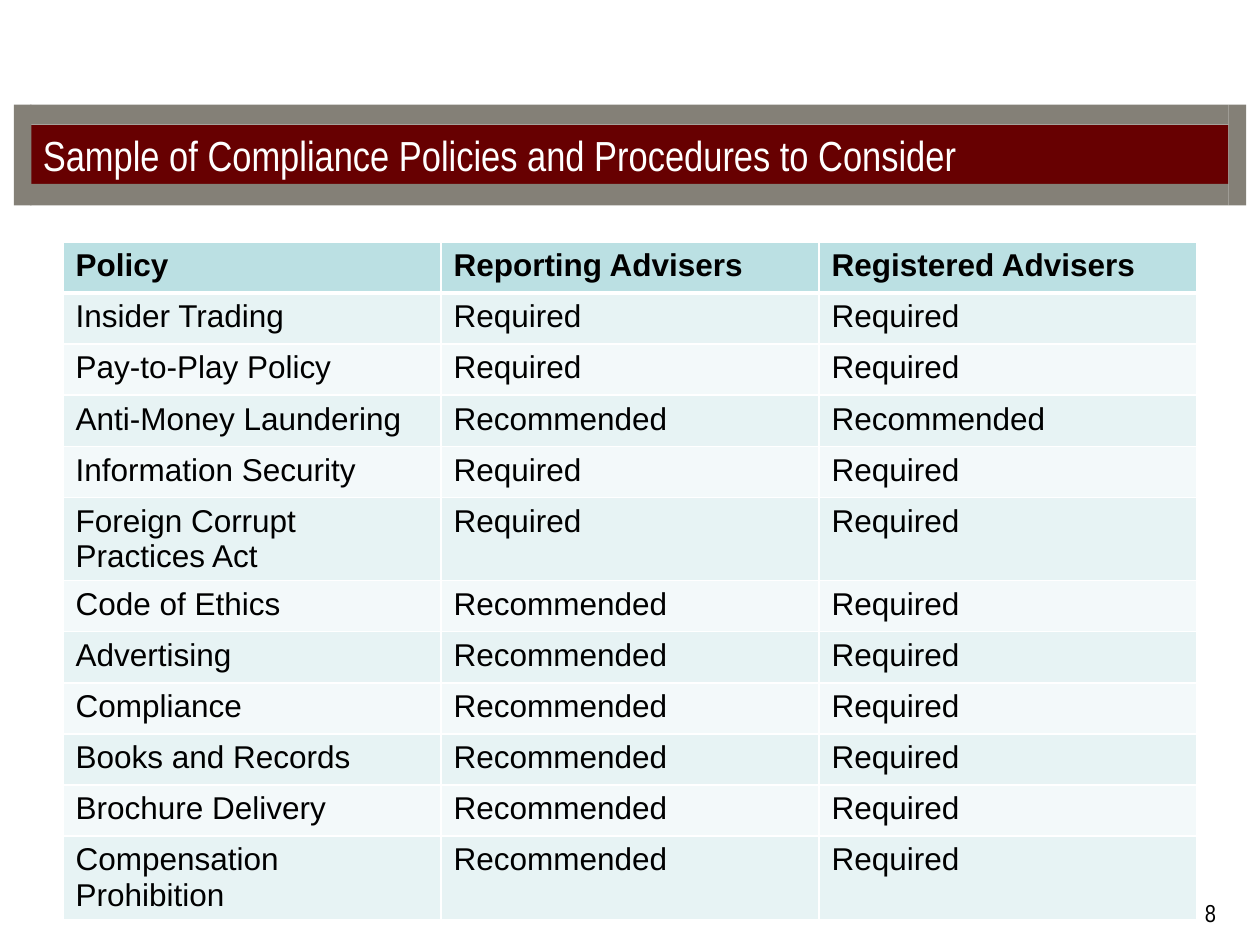
from lxml.etree import SubElement
from pptx import Presentation
from pptx.dml.color import RGBColor
from pptx.enum.shapes import MSO_SHAPE
from pptx.enum.text import MSO_ANCHOR, MSO_AUTO_SIZE, PP_ALIGN
from pptx.oxml.ns import qn
from pptx.util import Inches, Pt

TITLE = "Sample of Compliance Policies and Procedures to Consider"
PAGE_NUMBER = "8"
HEADER = ("Policy", "Reporting Advisers", "Registered Advisers")
REQ, REC = "Required", "Recommended"
POLICIES = [
    ("Insider Trading", REQ, REQ),
    ("Pay-to-Play Policy", REQ, REQ),
    ("Anti-Money Laundering", REC, REC),
    ("Information Security", REQ, REQ),
    ("Foreign Corrupt Practices Act", REQ, REQ),
    ("Code of Ethics", REC, REQ),
    ("Advertising", REC, REQ),
    ("Compliance", REC, REQ),
    ("Books and Records", REC, REQ),
    ("Brochure Delivery", REC, REQ),
    ("Compensation Prohibition", REC, REQ),
]
WHITE, BLACK, GRAY, MAROON = "FFFFFF", "000000", "848077", "670001"
HEADER_FILL, BAND_FILLS = "BBE0E3", ("E7F3F4", "F3F9FA")

WIDTH, HEIGHT = 10, 7.5
TITLE_BOX = (0.24, 0.99, 9.51, 0.47)
FRAME_TOP, FRAME_HEIGHT, FRAME_SIDE = 0.83, 0.8, 0.14
TABLE_BOX = (0.5, 1.92, 9, 4.87)
NUMBER_BOX = (7.42, 7.08, 2.33, 0.38)


def color(hex_string):
    return RGBColor.from_string(hex_string)


def fill_solid(item, hex_string):
    item.fill.solid()
    item.fill.fore_color.rgb = color(hex_string)


def write(frame, text, font, size, hex_string, bold=False, align=PP_ALIGN.LEFT):
    para = frame.paragraphs[0]
    para.alignment = align
    span = para.add_run()
    span.text = text
    span.font.name, span.font.size, span.font.bold = font, Pt(size), bold
    span.font.color.rgb = color(hex_string)


def add_bar(page, *box):
    bar = page.shapes.add_shape(MSO_SHAPE.RECTANGLE, *map(Inches, box))
    bar.shadow.inherit = False
    fill_solid(bar, GRAY)
    bar.line.fill.background()


def set_borders(cell, bottom):
    """Draw white cell borders; they must precede the cell's fill in the XML."""
    properties = cell._tc.get_or_add_tcPr()
    for side, points in (("L", 1), ("R", 1), ("T", 1), ("B", bottom)):
        line = SubElement(properties, qn(f"a:ln{side}"), w=str(Pt(points)))
        SubElement(SubElement(line, qn("a:solidFill")), qn("a:srgbClr"), val=WHITE)


def add_title(page):
    left, top, width, height = TITLE_BOX
    right, bottom = left + width, top + height
    add_bar(page, left, FRAME_TOP, width, top - FRAME_TOP)
    add_bar(page, left, bottom, width, FRAME_TOP + FRAME_HEIGHT - bottom)
    for side_left in (left - FRAME_SIDE + 0.01, right):
        add_bar(page, side_left, FRAME_TOP, FRAME_SIDE, FRAME_HEIGHT)

    title = page.shapes.title
    title.left, title.top, title.width, title.height = map(Inches, TITLE_BOX)
    fill_solid(title, MAROON)
    frame = title.text_frame
    frame.auto_size = MSO_AUTO_SIZE.NONE
    frame.vertical_anchor = MSO_ANCHOR.MIDDLE
    frame.margin_top = frame.margin_bottom = 0
    write(frame, TITLE, "Arial Narrow", 24, WHITE)


def add_policy_table(page):
    rows = [HEADER, *POLICIES]
    shape = page.shapes.add_table(len(rows), len(HEADER), *map(Inches, TABLE_BOX))
    for r, values in enumerate(rows):
        is_header = r == 0
        for c, text in enumerate(values):
            cell = shape.table.cell(r, c)
            set_borders(cell, bottom=3 if is_header else 1)
            fill_solid(cell, HEADER_FILL if is_header else BAND_FILLS[(r - 1) % 2])
            write(cell.text_frame, text, "Arial", 18, BLACK, bold=is_header)


def add_page_number(page):
    box = page.shapes.add_textbox(*map(Inches, NUMBER_BOX))
    box.text_frame.word_wrap = True
    write(box.text_frame, PAGE_NUMBER, "Arial Narrow", 14, BLACK, align=PP_ALIGN.RIGHT)


def main():
    deck = Presentation()
    deck.slide_width, deck.slide_height = Inches(WIDTH), Inches(HEIGHT)
    page = deck.slides.add_slide(deck.slide_layouts[5])
    add_title(page)
    add_policy_table(page)
    add_page_number(page)
    deck.save("out.pptx")


if __name__ == "__main__":
    main()
